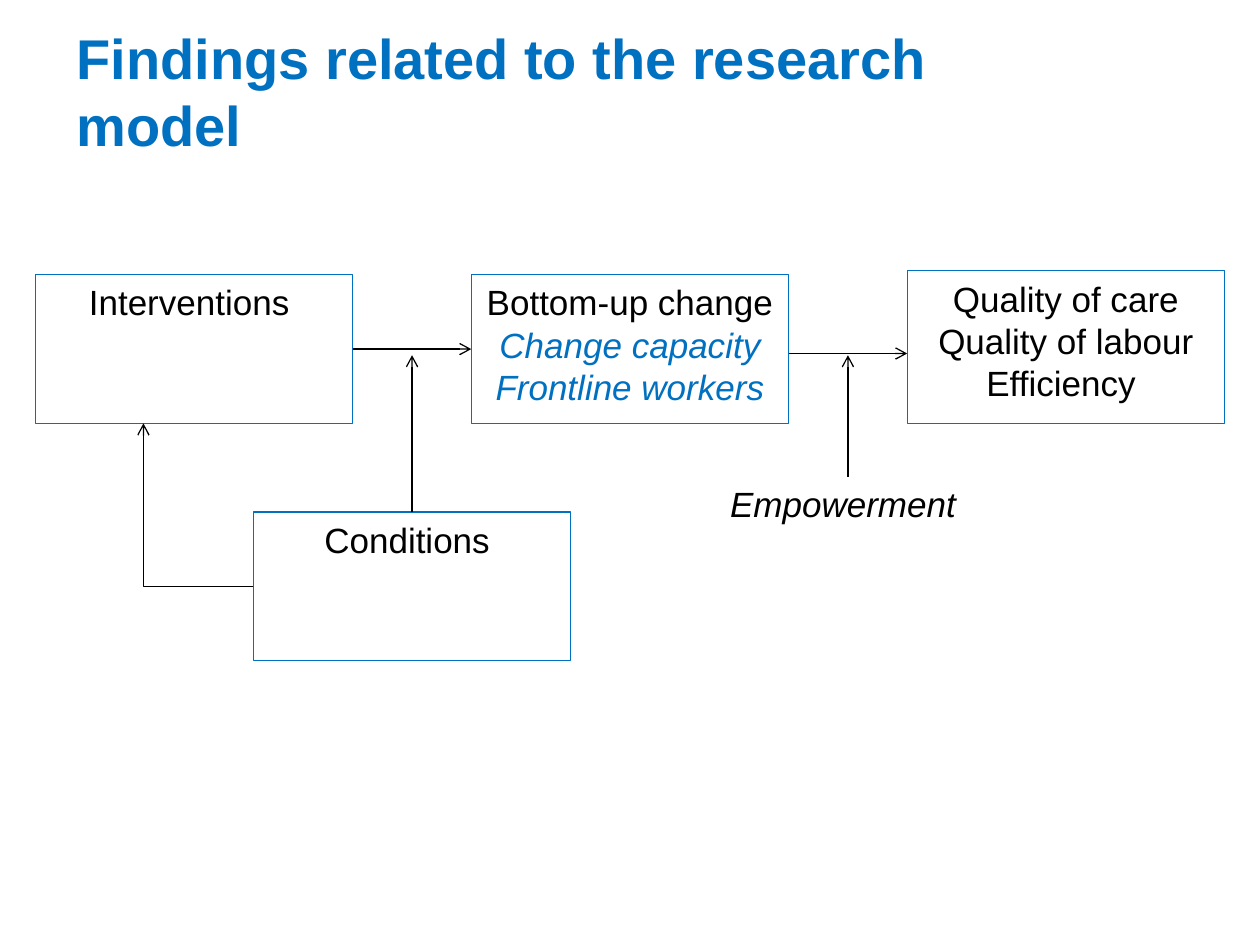
from dataclasses import dataclass
from lxml.etree import SubElement
from pptx import Presentation
from pptx.dml.color import RGBColor
from pptx.enum.shapes import MSO_CONNECTOR, MSO_SHAPE
from pptx.enum.text import MSO_ANCHOR, PP_ALIGN
from pptx.oxml.ns import qn
from pptx.util import Pt


@dataclass(frozen=True)
class Theme:
    font: str = "Arial"
    blue: RGBColor = RGBColor(0x00, 0x70, 0xC0)
    black: RGBColor = RGBColor(0, 0, 0)
    title_size: float = 32
    body_size: float = 20
    line_width: float = 0.75


THEME = Theme()

# Content: each line is (text, colour, bold, italic)
TITLE = [("Findings related to the research model", THEME.blue, True, False)]
EMPOWERMENT = [("Empowerment ", THEME.black, False, True)]
BOX_LINES = {
    "interventions": [("Interventions ", THEME.black, False, False)],
    "change": [
        ("Bottom-up change", THEME.black, False, False),
        ("Change capacity", THEME.blue, False, True),
        ("Frontline workers", THEME.blue, False, True),
    ],
    "outcomes": [
        ("Quality of care", THEME.black, False, False),
        ("Quality of labour", THEME.black, False, False),
        ("Efficiency ", THEME.black, False, False),
    ],
    "conditions": [("Conditions ", THEME.black, False, False)],
}

# Layout: three columns on one row, conditions centred under the first gap
LEFT, TOP, WIDTH, HEIGHT, GAP = 20.2, 157, 181.4, 85, 67.7
PITCH = WIDTH + GAP
BOTTOM = TOP + HEIGHT
FIRST_GAP_MIDDLE = LEFT + WIDTH + GAP / 2
SECOND_GAP_MIDDLE = FIRST_GAP_MIDDLE + PITCH
ARROW_TIP = 203
BOX_PLACES = {
    "interventions": (LEFT, TOP, WIDTH, HEIGHT),
    "change": (LEFT + PITCH, TOP, WIDTH, HEIGHT),
    "outcomes": (LEFT + 2 * PITCH, TOP - 2.2, WIDTH, HEIGHT + 2.2),
    "conditions": (FIRST_GAP_MIDDLE - WIDTH / 2, 292.6, WIDTH, HEIGHT),
}
LABEL_WIDTH = 153.4
LABEL_PLACE = (SECOND_GAP_MIDDLE - LABEL_WIDTH / 2, 272.4, LABEL_WIDTH, 31.5)
TITLE_PLACE = (36.7, 8.6, 543.6, 85)


def points(values):
    return [Pt(value) for value in values]


def write_lines(shape, lines, size, alignment, anchor=MSO_ANCHOR.TOP):
    frame = shape.text_frame
    frame.word_wrap = True
    frame.vertical_anchor = anchor
    for index, (text, colour, bold, italic) in enumerate(lines):
        paragraph = frame.paragraphs[0] if index == 0 else frame.add_paragraph()
        paragraph.alignment = alignment
        run = paragraph.add_run()
        run.text = text
        run.font.name = THEME.font
        run.font.size = Pt(size)
        run.font.bold = bold
        run.font.italic = italic
        run.font.color.rgb = colour


def add_text(slide, place, lines, size, alignment, anchor=MSO_ANCHOR.TOP):
    text_box = slide.shapes.add_textbox(*points(place))
    write_lines(text_box, lines, size, alignment, anchor)
    return text_box


def add_box(slide, place, lines):
    box = slide.shapes.add_shape(MSO_SHAPE.RECTANGLE, *points(place))
    box.shadow.inherit = False
    box.fill.background()
    box.line.color.rgb = THEME.blue
    box.line.width = Pt(THEME.line_width)
    write_lines(box, lines, THEME.body_size, PP_ALIGN.CENTER)
    return box


def add_arrow(slide, start, end, begin=None, finish=None, kind=MSO_CONNECTOR.STRAIGHT):
    """begin and finish are (shape, connection site) pairs."""
    connector = slide.shapes.add_connector(kind, *points((*start, *end)))
    if begin:
        connector.begin_connect(*begin)
    if finish:
        connector.end_connect(*finish)
    connector.line.color.rgb = THEME.black
    connector.line.width = Pt(THEME.line_width)
    properties = connector._element.spPr
    SubElement(properties.find(qn("a:ln")), qn("a:tailEnd"), type="arrow")
    SubElement(properties, qn("a:effectLst"))
    return connector


def main():
    presentation = Presentation()
    presentation.slide_width, presentation.slide_height = Pt(720), Pt(540)
    slide = presentation.slides.add_slide(presentation.slide_layouts[6])

    # Title, boxes and label
    add_text(slide, TITLE_PLACE, TITLE, THEME.title_size, PP_ALIGN.LEFT, MSO_ANCHOR.BOTTOM)
    boxes = {
        name: add_box(slide, BOX_PLACES[name], lines)
        for name, lines in BOX_LINES.items()
    }
    label = add_text(slide, LABEL_PLACE, EMPOWERMENT, THEME.body_size, PP_ALIGN.CENTER)

    # Arrows along the row
    middle = TOP + HEIGHT / 2
    change_left = LEFT + PITCH
    add_arrow(slide, (LEFT + WIDTH, middle), (change_left, middle),
              (boxes["interventions"], 3), (boxes["change"], 1))
    add_arrow(slide, (change_left + WIDTH, 202), (change_left + PITCH, 202))

    # Arrows rising to the row
    conditions_left, conditions_top = BOX_PLACES["conditions"][:2]
    add_arrow(slide, (SECOND_GAP_MIDDLE, LABEL_PLACE[1]),
              (SECOND_GAP_MIDDLE, ARROW_TIP), (label, 0))
    add_arrow(slide, (FIRST_GAP_MIDDLE, conditions_top),
              (FIRST_GAP_MIDDLE, ARROW_TIP), (boxes["conditions"], 0))

    # Elbow from conditions back to interventions, with a single bend
    elbow = add_arrow(slide, (conditions_left, conditions_top + HEIGHT / 2), (82, BOTTOM),
                      kind=MSO_CONNECTOR.ELBOW)
    elbow._element.spPr.find(qn("a:prstGeom")).set("prst", "bentConnector2")

    presentation.save("out.pptx")


if __name__ == "__main__":
    main()
